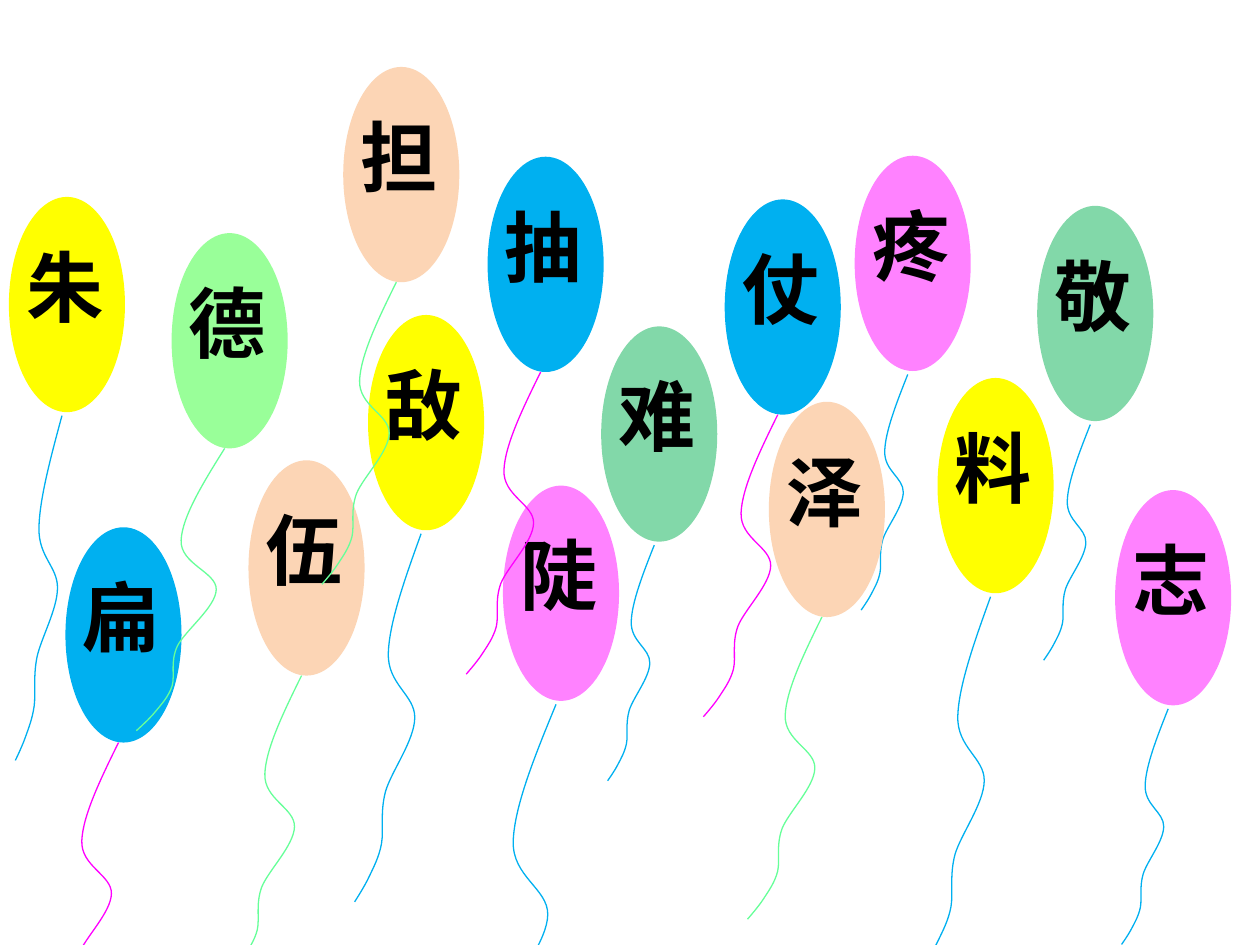
from dataclasses import dataclass

from lxml.etree import SubElement
from pptx import Presentation
from pptx.dml.color import RGBColor
from pptx.enum.shapes import MSO_SHAPE
from pptx.enum.text import MSO_AUTO_SIZE
from pptx.oxml.ns import qn
from pptx.util import Cm, Pt


@dataclass(frozen=True)
class Theme:
    yellow: str = "FFFF00"
    blue: str = "00B0F0"
    peach: str = "FCD5B5"
    lime: str = "99FF99"
    mint: str = "66FF99"
    magenta: str = "FF00FF"
    green: str = "00B050"
    ink: str = "000000"
    font: str = "Arial"
    size: int = 44
    thread: float = 0.75


T = Theme()
SHEER = {T.magenta: 49, T.green: 49}  # opacity in percent

# string width and height (cm), colour, gap below the balloon
SHORT = (0.94, 4.75, T.blue, 0.07)
LONG = (1.34, 7.42, T.blue, 0.07)
PINK = (1.5, 6.09, T.magenta, 0)
MINT = (1.5, 6.09, T.mint, 0)

# character, left and top (cm), balloon colour, string; back to front
BALLOONS = [
    ("志", 22.48, 9.88, T.magenta, SHORT),
    ("料", 18.9, 7.62, T.yellow, LONG),
    ("仗", 14.61, 4.02, T.blue, PINK),
    ("伍", 5.01, 9.28, T.peach, MINT),
    ("扁", 1.32, 10.63, T.blue, PINK),
    ("陡", 10.14, 9.79, T.magenta, (1.75, 8.48, T.blue, 0.07)),
    ("敬", 20.91, 4.15, T.green, SHORT),
    ("朱", 0.18, 3.97, T.yellow, (0.94, 6.95, T.blue, 0.07)),
    ("德", 3.46, 4.7, T.lime, (1.78, 5.69, T.mint, 0)),
    ("敌", 7.42, 6.35, T.yellow, LONG),
    ("疼", 17.23, 3.14, T.magenta, SHORT),
    ("担", 6.92, 1.35, T.peach, MINT),
    ("抽", 9.83, 3.16, T.blue, PINK),
    ("难", 12.12, 6.58, T.green, SHORT),
    ("泽", 15.5, 8.1, T.peach, MINT),
]

BALLOON_W, BALLOON_H = 2.34, 4.34
LABEL_DX, LABEL_DY, LABEL_W, LABEL_H = 0.1, 0.73, 3, 2.14
KNOT_DX = 1.07

# Bezier points of a string, in percent of its width and height
STRING = [
    (100, 0),
    (76, 12), (52, 24.2), (50.7, 32.5),
    (49.3, 41), (91, 43.8), (90.5, 50),
    (90, 56.2), (55.5, 64.5), (46.5, 70),
    (38, 75.8), (44, 80.3), (40.5, 84.2),
    (36.5, 88), (28, 90.8), (21.5, 93.3),
    (14.5, 96), (0, 100), (0, 100),
]


def curve(sp):
    """Turn each three straight segments of a freeform into one Bezier segment."""
    lines = list(sp._element.iter(qn("a:lnTo")))
    for first, second, third in zip(lines[::3], lines[1::3], lines[2::3]):
        outline = first.getparent()
        bezier = SubElement(outline, qn("a:cubicBezTo"))
        for line in (first, second, third):
            bezier.append(line[0])
            outline.remove(line)


def add_oval(shapes, left, top, color):
    sp = shapes.add_shape(MSO_SHAPE.OVAL, Cm(left), Cm(top), Cm(BALLOON_W), Cm(BALLOON_H))
    sp.shadow.inherit = False
    sp.fill.solid()
    sp.fill.fore_color.rgb = RGBColor.from_string(color)
    sp.line.fill.background()
    if color in SHEER:
        clr = sp._element.spPr.find(qn("a:solidFill"))[0]
        SubElement(clr, qn("a:alpha"), val=str(SHEER[color] * 1000))


def add_label(shapes, left, top, char):
    box = shapes.add_textbox(Cm(left + LABEL_DX), Cm(top + LABEL_DY), Cm(LABEL_W), Cm(LABEL_H))
    tf = box.text_frame
    tf.word_wrap = True
    tf.auto_size = MSO_AUTO_SIZE.SHAPE_TO_FIT_TEXT
    p = tf.paragraphs[0]
    p.text = char
    p.font.name, p.font.size, p.font.bold = T.font, Pt(T.size), True
    p.font.color.rgb = RGBColor.from_string(T.ink)


def add_string(shapes, left, top, width, height, color):
    points = [(Cm(left + width * x / 100), Cm(top + height * y / 100)) for x, y in STRING]
    builder = shapes.build_freeform(*points[0])
    builder.add_line_segments(points[1:], close=False)
    sp = builder.convert_to_shape()
    curve(sp)
    sp.shadow.inherit = False
    sp.fill.background()
    sp.line.color.rgb = RGBColor.from_string(color)
    sp.line.width = Pt(T.thread)


def main():
    prs = Presentation()
    prs.slide_width, prs.slide_height = Cm(25.4), Cm(19.05)
    s = prs.slides.add_slide(prs.slide_layouts[6])
    for char, left, top, color, (width, height, thread, gap) in BALLOONS:
        shapes = s.shapes.add_group_shape().shapes
        add_oval(shapes, left, top, color)
        add_label(shapes, left, top, char)
        add_string(shapes, left + KNOT_DX - width, top + BALLOON_H + gap, width, height, thread)
    prs.save("out.pptx")


if __name__ == "__main__":
    main()
